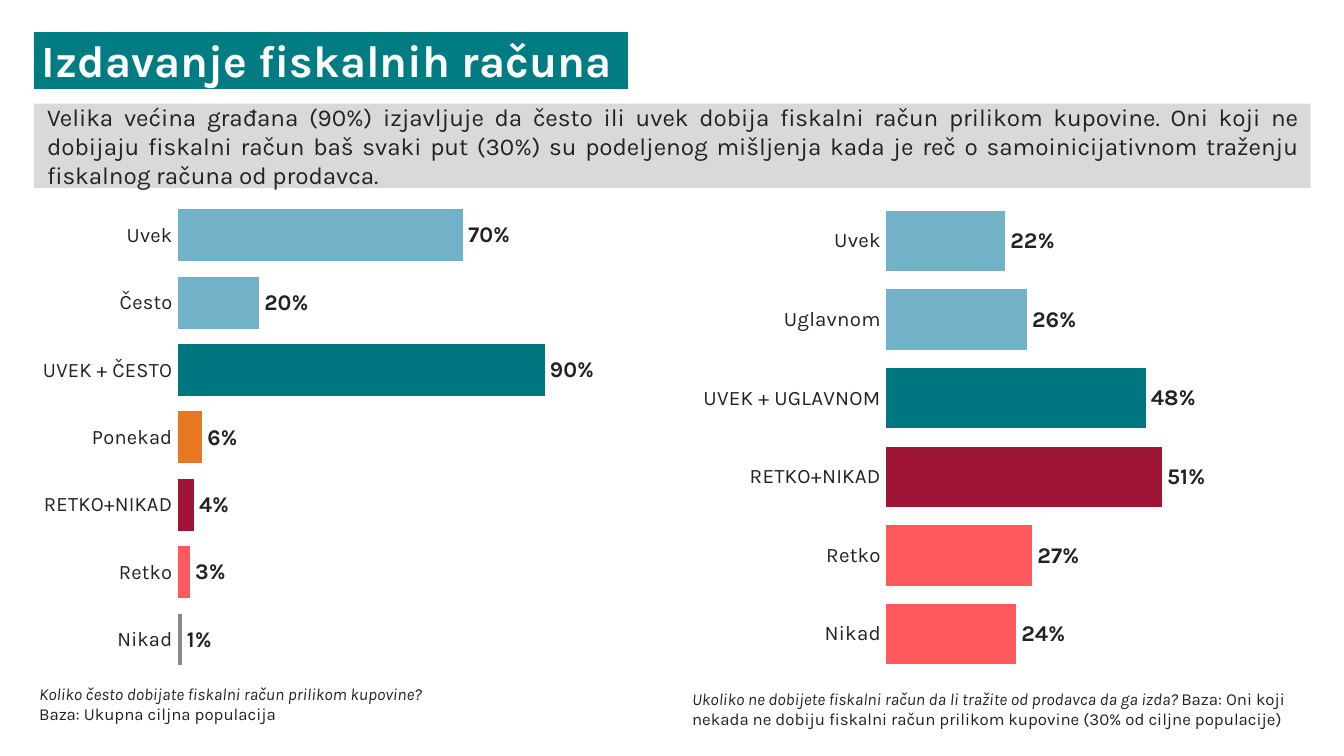
from lxml.etree import SubElement
from pptx import Presentation
from pptx.chart.data import CategoryChartData
from pptx.dml.color import RGBColor
from pptx.enum.chart import XL_CHART_TYPE, XL_LABEL_POSITION, XL_TICK_MARK
from pptx.enum.shapes import MSO_SHAPE
from pptx.enum.text import MSO_ANCHOR, PP_ALIGN
from pptx.oxml.ns import qn
from pptx.util import Cm, Pt

COLORS = {
    "text": "222223", "white": "FFFFFF", "title": "007C82", "band": "D9D9D9",
    "blue": "71B2C9", "teal": "007681", "orange": "E87722",
    "wine": "9F1535", "coral": "FF585D", "gray": "888B8D",
}


class SurveySlide:
    """Holds the style and the current slide."""

    def __init__(self, deck, font_name="Karla"):
        """Add a blank slide to the deck."""
        self.page = deck.slides.add_slide(deck.slide_layouts[6])
        self.font_name = font_name

    def color(self, name):
        """Look up a colour by name."""
        return RGBColor.from_string(COLORS[name])

    def style(self, font, size, color="text", bold=False, italic=False):
        """Apply the deck style to a font."""
        font.name, font.size = self.font_name, Pt(size)
        font.bold, font.italic = bold, italic
        font.color.rgb = self.color(color)

    def add_text(self, box, paragraphs, size, margins, align=PP_ALIGN.LEFT, **look):
        """Fill a shape with paragraphs given as lists of (text, italic) runs."""
        frame = box.text_frame
        frame.word_wrap = True
        frame.vertical_anchor = MSO_ANCHOR.MIDDLE
        frame.margin_left = frame.margin_right = Cm(margins[0])
        frame.margin_top = frame.margin_bottom = Cm(margins[1])
        for index, runs in enumerate(paragraphs):
            para = frame.add_paragraph() if index else frame.paragraphs[0]
            para.alignment = align
            for text, italic in runs:
                span = para.add_run()
                span.text = text
                self.style(span.font, size, italic=italic, **look)

    def band(self, place, fill, text, size, margins, **look):
        """Add a filled rectangle with text."""
        box = self.page.shapes.add_shape(MSO_SHAPE.RECTANGLE, *map(Cm, place))
        box.shadow.inherit = False
        box.fill.solid()
        box.fill.fore_color.rgb = self.color(fill)
        box.line.fill.background()
        self.add_text(box, [[(text, False)]], size, margins, **look)
        return box

    def note(self, place, paragraphs):
        """Add a small note under a chart."""
        box = self.page.shapes.add_textbox(*map(Cm, place))
        self.add_text(box, paragraphs, 9, (0.13, 0))

    def bars(self, place, rows, maximum, layout):
        """Add a bar chart from (category, value, colour) rows."""
        names, values, fills = zip(*rows)
        data = CategoryChartData(number_format='0"%"')
        data.categories = names
        data.add_series("Series 1", values)
        chart = self.page.shapes.add_chart(
            XL_CHART_TYPE.BAR_CLUSTERED, *map(Cm, place), data).chart
        chart.has_legend = chart.has_title = False
        self.style(chart.font, 10)
        self.axes(chart, maximum)
        plot = chart.plots[0]
        plot.gap_width, plot.vary_by_categories = 30, False
        series = plot.series[0]
        for index, fill in enumerate(fills):
            bar = series.points[index].format.fill
            bar.solid()
            bar.fore_color.rgb = self.color(fill)
        labels = series.data_labels
        labels.show_value = True
        labels.number_format, labels.number_format_is_linked = '0"%"', False
        labels.position = XL_LABEL_POSITION.OUTSIDE_END
        self.style(labels.font, 12, bold=True)
        self.place_plot(chart, layout)

    def axes(self, chart, maximum):
        """Show only the category names, first one on top."""
        category, value = chart.category_axis, chart.value_axis
        category.reverse_order = True
        category.major_tick_mark = category.minor_tick_mark = XL_TICK_MARK.NONE
        category.format.line.fill.background()
        self.style(category.tick_labels.font, 11)
        value.minimum_scale, value.maximum_scale = 0, maximum
        value.has_major_gridlines = False
        value.visible = False

    def place_plot(self, chart, layout):
        """Fix the inner plot area as fractions of the chart."""
        area = chart.plots[0]._element.getparent()
        holder = area.find(qn("c:layout"))
        if holder is None:
            holder = SubElement(area, qn("c:layout"))
            area.insert(0, holder)
        manual = SubElement(holder, qn("c:manualLayout"))
        settings = [("layoutTarget", "inner"), ("xMode", "edge"), ("yMode", "edge")]
        settings += zip("xywh", layout)
        for tag, value in settings:
            SubElement(manual, qn(f"c:{tag}")).set("val", str(value))


def main():
    """Build the slide and save it."""
    deck = Presentation()
    deck.slide_width, deck.slide_height = Cm(25.4), Cm(14.29)
    slide = SurveySlide(deck)

    slide.band(
        (0.64, 1.96, 24.13, 1.6), "band",
        "Velika većina građana (90%) izjavljuje da često ili uvek dobija fiskalni "
        "račun prilikom kupovine. Oni koji ne dobijaju fiskalni račun baš svaki put "
        "(30%) su podeljenog mišljenja kada je reč o samoinicijativnom traženju "
        "fiskalnog računa od prodavca.",
        13, (0.25, 0), align=PP_ALIGN.JUSTIFY)
    title = slide.band((0.64, 0.61, 11.23, 1.07), "title", "Izdavanje fiskalnih računa",
                       24, (0.15, 0.03), color="white", bold=True)
    title.text_frame.paragraphs[0].line_spacing = Pt(27.9)

    slide.note((0.61, 12.93, 12.12, 0.76), [
        [("Koliko često dobijate fiskalni račun prilikom kupovine?", True)],
        [("Baza: Ukupna ciljna populacija", False)],
    ])
    slide.note((12.95, 13, 11.96, 0.81), [[
        ("Ukoliko ne dobijete fiskalni račun da li tražite od prodavca da ga izda? ", True),
        ("Baza: Oni koji nekada ne dobiju fiskalni račun prilikom kupovine "
         "(30% od ciljne populacije)", False),
    ]])

    slide.bars((0.81, 3.81, 11.25, 8.92), [
        ("Uvek", 70, "blue"), ("Često", 20, "blue"), ("UVEK + ČESTO", 90, "teal"),
        ("Ponekad", 6, "orange"), ("RETKO+NIKAD", 4, "wine"),
        ("Retko", 3, "coral"), ("Nikad", 1, "gray"),
    ], 110, (0.21, 0, 0.77, 1))
    slide.bars((12.73, 3.81, 12.19, 8.92), [
        ("Uvek", 22, "blue"), ("Uglavnom", 26, "blue"), ("UVEK + UGLAVNOM", 48, "teal"),
        ("RETKO+NIKAD", 51, "wine"), ("Retko", 27, "coral"), ("Nikad", 24, "coral"),
    ], 80, (0.33, 0, 0.67, 1))
    deck.save("out.pptx")


if __name__ == "__main__":
    main()
